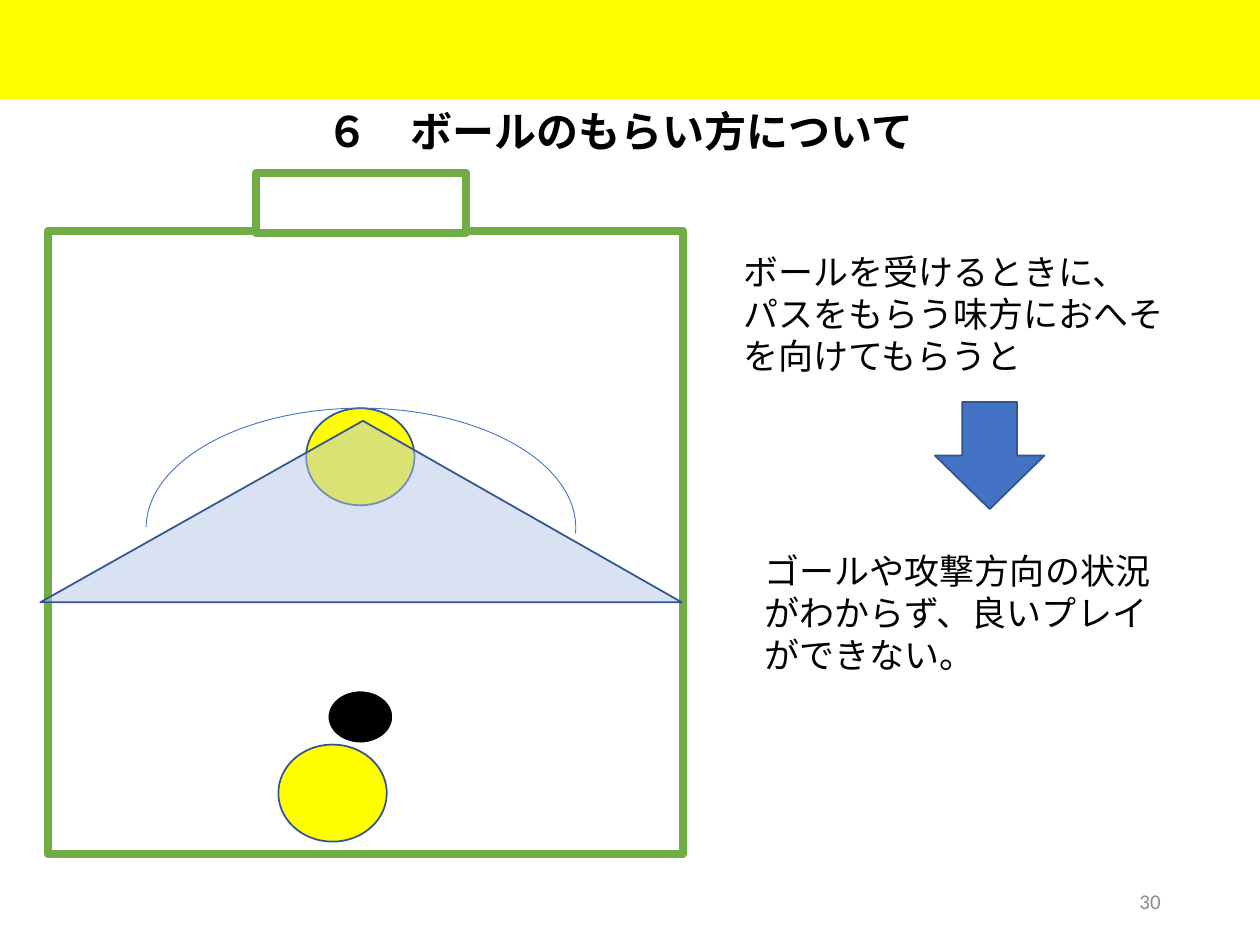
import pptx
import pptx.util
import pptx.dml.color
import pptx.enum.shapes
import pptx.enum.text
import pptx.oxml.ns
import lxml.etree

Inches, Pt = pptx.util.Inches, pptx.util.Pt
RGBColor = pptx.dml.color.RGBColor
MSO_SHAPE = pptx.enum.shapes.MSO_SHAPE
PP_ALIGN = pptx.enum.text.PP_ALIGN
MSO_ANCHOR = pptx.enum.text.MSO_ANCHOR

YELLOW = RGBColor(0xFF, 0xFF, 0x00)
GREEN = RGBColor(0x70, 0xAD, 0x47)
BLUE = RGBColor(0x44, 0x72, 0xC4)
NAVY = RGBColor(0x32, 0x54, 0x91)
PALE_BLUE = RGBColor(0xB4, 0xC7, 0xE7)
GRAY = RGBColor(0x8C, 0x8C, 0x8C)
WHITE = RGBColor(0xFF, 0xFF, 0xFF)
BLACK = RGBColor(0x00, 0x00, 0x00)
FONT = "Calibri"

# Content: (left, top, width, height), then the format
PLAYER = dict(kind=MSO_SHAPE.FLOWCHART_CONNECTOR, fill=YELLOW, line=NAVY)
PITCH = dict(kind=MSO_SHAPE.RECTANGLE, fill=WHITE, line=GREEN, weight=4.5)
SHAPES = [
    # Header band
    ((-0.02, 0, 10.02, 0.79), dict(kind=MSO_SHAPE.RECTANGLE, fill=YELLOW)),
    # Pitch and goal
    ((0.38, 1.83, 5.04, 4.95), PITCH),
    ((2.03, 1.37, 1.67, 0.48), PITCH),
    # Receiver, passer and ball
    ((2.43, 3.24, 0.86, 0.77), PLAYER),
    ((2.21, 5.91, 0.86, 0.77), PLAYER),
    ((2.6, 5.48, 0.52, 0.42), dict(PLAYER, fill=BLACK, line=WHITE)),
    # Blind side and field of view
    ((1.16, 3.24, 3.41, 1.9),
     dict(kind=MSO_SHAPE.ARC, line=BLUE, weight=0.5, adj=(108.106, 0.878))),
    ((0.32, 3.34, 5.09, 1.44),
     dict(kind=MSO_SHAPE.ISOSCELES_TRIANGLE, fill=PALE_BLUE, line=NAVY,
          adj=(0.503,), alpha=50)),
    # Arrow from cause to result
    ((7.42, 3.19, 0.87, 0.85),
     dict(kind=MSO_SHAPE.DOWN_ARROW, fill=BLUE, line=NAVY)),
]
TEXTS = [
    ((2.43, 0.79, 4.98, 0.5), ["６　ボールのもらい方について"],
     dict(size=24, bold=True, align=PP_ALIGN.CENTER)),
    ((5.8, 1.94, 3.72, 1.11),
     ["ボールを受けるときに、", "パスをもらう味方におへそを向けてもらうと"], {}),
    ((5.97, 4.31, 3.34, 1.11),
     ["ゴールや攻撃方向の状況がわからず、良いプレイができない。"], {}),
    ((7.06, 6.95, 2.25, 0.4), ["30"],
     dict(size=12, color=GRAY, align=PP_ALIGN.RIGHT, anchor=MSO_ANCHOR.MIDDLE)),
]


def add_shape(s, box, kind, fill=None, line=None, weight=1, adj=(), alpha=None):
    sp = s.shapes.add_shape(kind, *map(Inches, box))
    sp.shadow.inherit = False
    for i, value in enumerate(adj):
        sp.adjustments[i] = value
    if fill is None:
        sp.fill.background()
    else:
        sp.fill.solid()
        sp.fill.fore_color.rgb = fill
    if alpha is not None:
        qn = pptx.oxml.ns.qn
        color = sp.element.spPr.find(qn("a:solidFill")).find(qn("a:srgbClr"))
        lxml.etree.SubElement(color, qn("a:alpha"), val=str(alpha * 1000))
    if line is None:
        sp.line.fill.background()
    else:
        sp.line.color.rgb = line
        sp.line.width = Pt(weight)


def add_text(s, box, lines, size=20, bold=False, color=BLACK,
             align=PP_ALIGN.LEFT, anchor=MSO_ANCHOR.TOP):
    tf = s.shapes.add_textbox(*map(Inches, box)).text_frame
    tf.word_wrap = True
    tf.vertical_anchor = anchor
    for i, line in enumerate(lines):
        p = tf.add_paragraph() if i else tf.paragraphs[0]
        p.alignment = align
        r = p.add_run()
        r.text = line
        r.font.name, r.font.size, r.font.bold = FONT, Pt(size), bold
        r.font.color.rgb = color


def main():
    prs = pptx.Presentation()
    prs.slide_width, prs.slide_height = Inches(10), Inches(7.5)
    s = prs.slides.add_slide(prs.slide_layouts[6])
    for box, style in SHAPES:
        add_shape(s, box, **style)
    for box, lines, style in TEXTS:
        add_text(s, box, lines, **style)
    prs.save("out.pptx")


if __name__ == "__main__":
    main()
